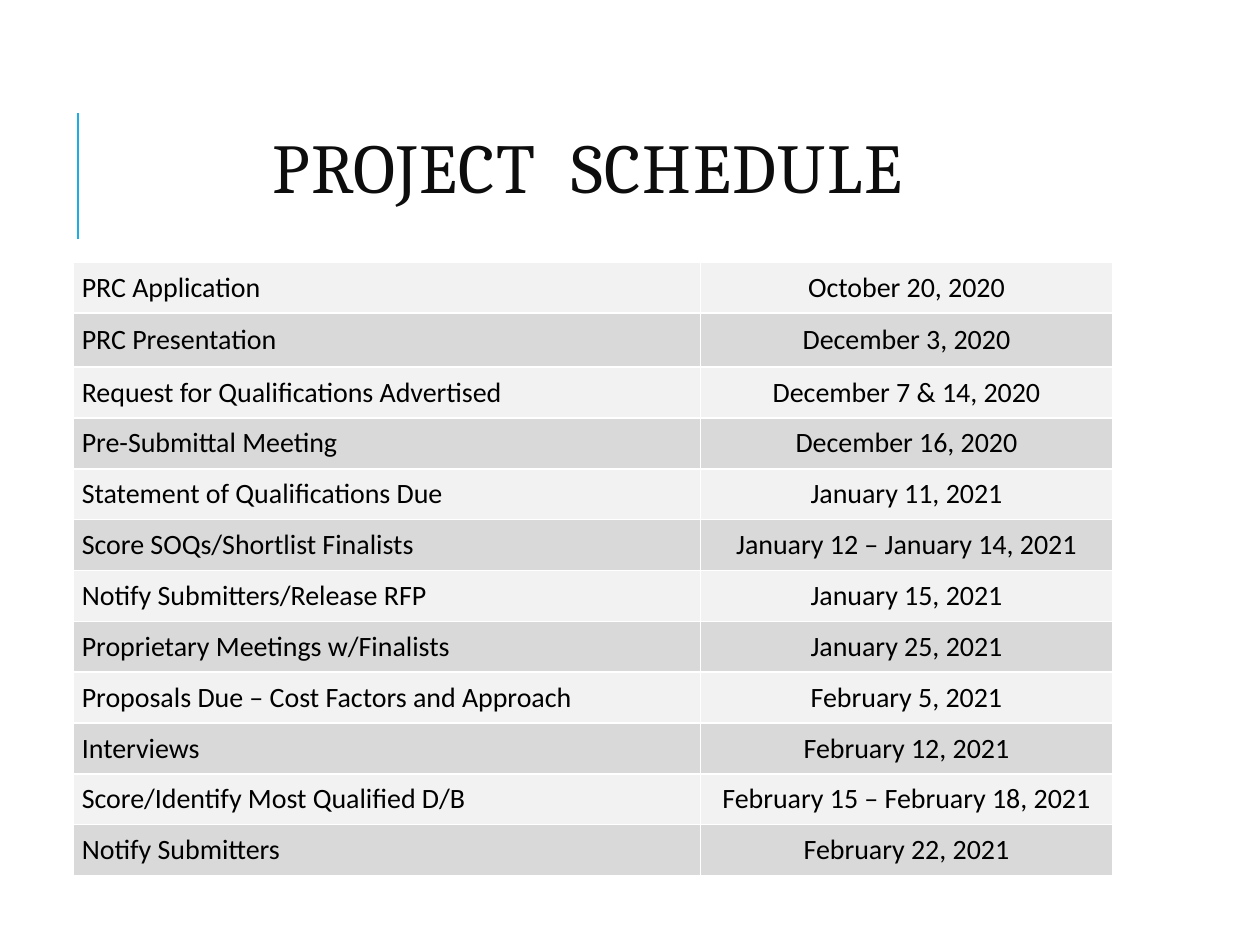
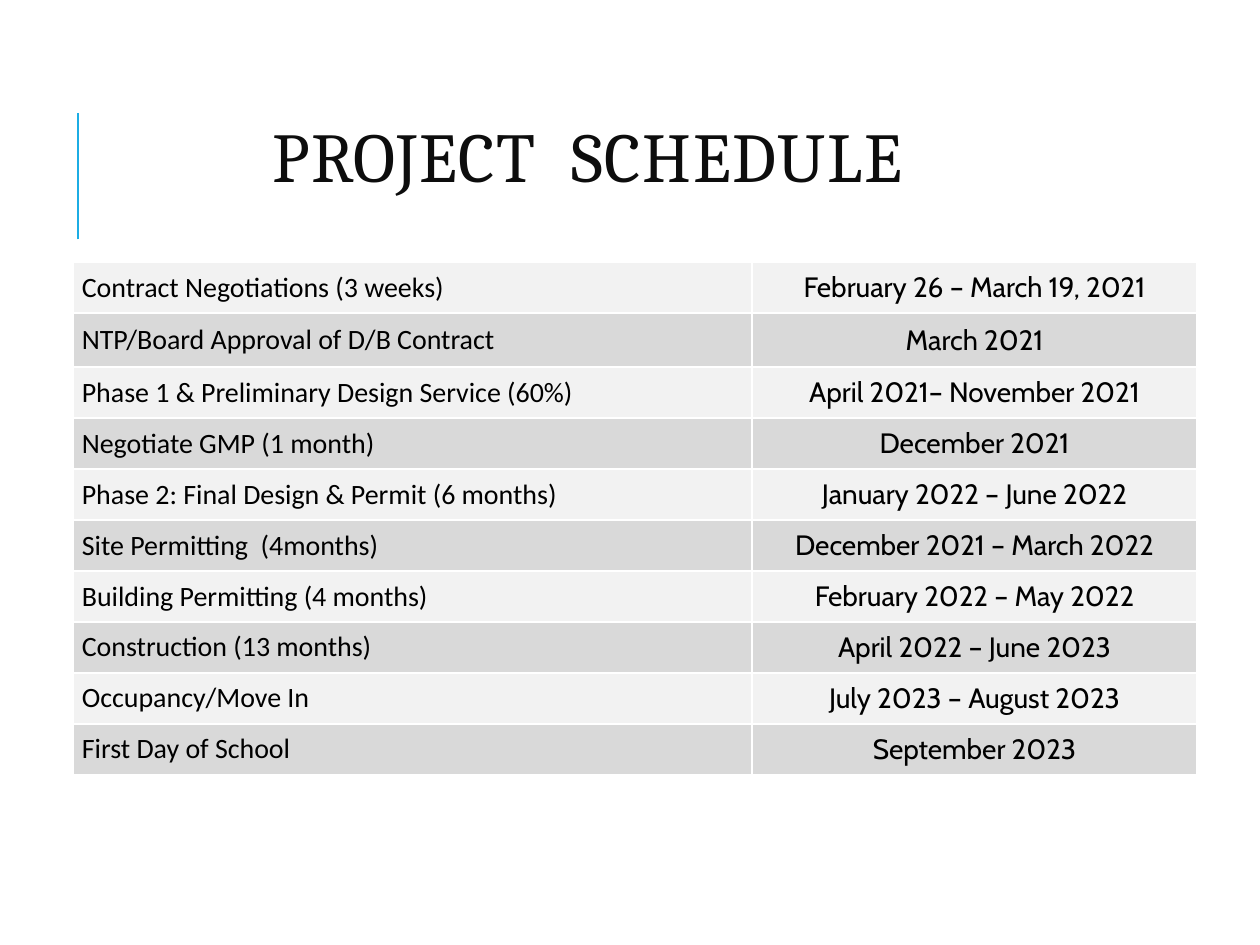
from dataclasses import dataclass

from lxml import etree
from pptx import Presentation
from pptx.dml.color import RGBColor
from pptx.enum.shapes import MSO_CONNECTOR
from pptx.enum.text import MSO_ANCHOR, PP_ALIGN
from pptx.oxml.ns import qn
from pptx.slide import Slide
from pptx.table import _Cell
from pptx.text.text import _Paragraph
from pptx.util import Inches, Pt

STRAIGHT = MSO_CONNECTOR.STRAIGHT
MIDDLE = MSO_ANCHOR.MIDDLE
LEFT, CENTER = PP_ALIGN.LEFT, PP_ALIGN.CENTER


@dataclass(frozen=True)
class Theme:
    accent: str = "1CADE4"
    title_color: str = "0D0D0D"
    text: str = "000000"
    border: str = "FFFFFF"
    bands: tuple[str, str] = ("F2F2F2", "D9D9D9")
    title_font: str = "Cambria"
    body_font: str = "Calibri"
    alt_font: str = "Cabin"
    title_size: int = 40
    body_size: int = 16


THEME = Theme()
TITLE = "PROJECT  SCHEDULE"
TITLE_BOTTOM = 1.75
TABLE_LEFT, TABLE_TOP = 0.58, 2.08
TALL_ROW = 1
TALL_ROW_HEIGHT = 0.43


@dataclass(frozen=True)
class Schedule:
    title_top: float
    column_widths: tuple[float, float]
    height: float
    date_font: str
    rows: tuple[tuple[str, str], ...]


SCHEDULES = (
    Schedule(1.0, (4.98, 3.27), 4.87, THEME.body_font, (
        ("PRC Application", "October 20, 2020"),
        ("PRC Presentation", "December 3, 2020"),
        ("Request for Qualifications Advertised", "December 7 & 14, 2020"),
        ("Pre-Submittal Meeting", "December 16, 2020"),
        ("Statement of Qualifications Due", "January 11, 2021"),
        ("Score SOQs/Shortlist Finalists", "January 12 – January 14, 2021"),
        ("Notify Submitters/Release RFP", "January 15, 2021"),
        ("Proprietary Meetings w/Finalists", "January 25, 2021"),
        ("Proposals Due – Cost Factors and Approach", "February 5, 2021"),
        ("Interviews", "February 12, 2021"),
        ("Score/Identify Most Qualified D/B", "February 15 – February 18, 2021"),
        ("Notify Submitters", "February 22, 2021"),
    )),
    Schedule(0.83, (5.39, 3.53), 4.07, THEME.alt_font, (
        ("Contract Negotiations (3 weeks)", "February 26 – March 19, 2021"),
        ("NTP/Board Approval of D/B Contract", "March 2021"),
        ("Phase 1 & Preliminary Design Service (60%)", "April 2021– November 2021"),
        ("Negotiate GMP (1 month)", "December 2021"),
        ("Phase 2: Final Design & Permit (6 months)", "January 2022 – June 2022"),
        ("Site Permitting  (4months)", "December 2021 – March 2022"),
        ("Building Permitting (4 months)", "February 2022 – May 2022"),
        ("Construction (13 months)", "April 2022 – June 2023"),
        ("Occupancy/Move In", "July 2023 – August 2023"),
        ("First Day of School", "September 2023"),
    )),
)


def rgb(color: str) -> RGBColor:
    return RGBColor.from_string(color)


def style_paragraph(p: _Paragraph, font: str, size: int, color: str, align: PP_ALIGN) -> None:
    p.alignment = align
    p.font.name = font
    p.font.size = Pt(size)
    p.font.color.rgb = rgb(color)


def add_accent_line(slide: Slide) -> None:
    x = Inches(0.62)
    line = slide.shapes.add_connector(STRAIGHT, x, Inches(1.9), x, Inches(0.9))
    line.line.color.rgb = rgb(THEME.accent)
    line.line.width = Pt(1.5)
    etree.SubElement(line._element.spPr, qn("a:effectLst"))


def add_title(slide: Slide, top: float) -> None:
    sp = slide.shapes.add_textbox(
        Inches(0.5), Inches(top), Inches(8.33), Inches(TITLE_BOTTOM - top))
    tf = sp.text_frame
    tf.word_wrap = True
    tf.vertical_anchor = MIDDLE
    p = tf.paragraphs[0]
    r = p.add_run()
    r.text = TITLE
    r._r.get_or_add_rPr().set("spc", "100")
    p.line_spacing = 0.8
    style_paragraph(p, THEME.title_font, THEME.title_size, THEME.title_color, CENTER)


def add_borders(cell: _Cell) -> None:
    tc_pr = cell._tc.get_or_add_tcPr()
    for side in ("lnL", "lnR", "lnT", "lnB"):
        ln = etree.SubElement(tc_pr, qn(f"a:{side}"), w=str(Pt(1)))
        fill = etree.SubElement(ln, qn("a:solidFill"))
        etree.SubElement(fill, qn("a:srgbClr"), val=THEME.border)


def fill_cell(cell: _Cell, text: str, font: str, align: PP_ALIGN, band: str) -> None:
    add_borders(cell)
    cell.fill.solid()
    cell.fill.fore_color.rgb = rgb(band)
    cell.vertical_anchor = MIDDLE
    cell.margin_left = cell.margin_right = Inches(0.07)
    cell.margin_top = cell.margin_bottom = 0
    cell.text = text
    style_paragraph(cell.text_frame.paragraphs[0], font, THEME.body_size, THEME.text, align)


def add_schedule_table(slide: Slide, schedule: Schedule) -> None:
    count = len(schedule.rows)
    table = slide.shapes.add_table(
        count, 2, Inches(TABLE_LEFT), Inches(TABLE_TOP),
        Inches(sum(schedule.column_widths)), Inches(schedule.height)).table
    table.first_row = table.horz_banding = False
    for column, width in zip(table.columns, schedule.column_widths):
        column.width = Inches(width)

    row_height = (schedule.height - TALL_ROW_HEIGHT) / (count - 1)
    for i, (activity, date) in enumerate(schedule.rows):
        table.rows[i].height = Inches(TALL_ROW_HEIGHT if i == TALL_ROW else row_height)
        band = THEME.bands[i % 2]
        fill_cell(table.cell(i, 0), activity, THEME.body_font, LEFT, band)
        fill_cell(table.cell(i, 1), date, schedule.date_font, CENTER, band)


def main() -> None:
    prs = Presentation()
    prs.slide_width, prs.slide_height = Inches(10), Inches(7.5)
    blank = prs.slide_layouts[6]
    for schedule in SCHEDULES:
        slide = prs.slides.add_slide(blank)
        add_accent_line(slide)
        add_title(slide, schedule.title_top)
        add_schedule_table(slide, schedule)
    prs.save("out.pptx")


if __name__ == "__main__":
    main()
